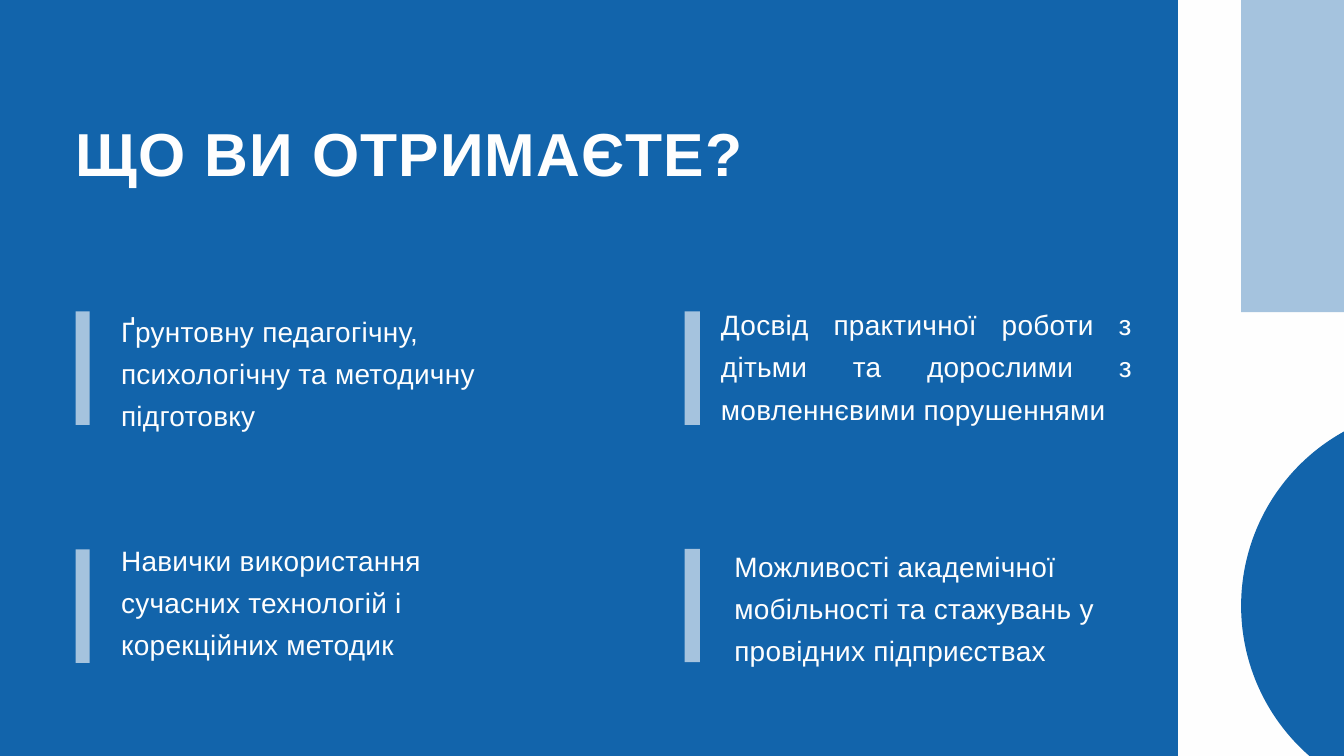
from pptx import Presentation
from pptx import util as u
from pptx.dml.color import RGBColor
from pptx.enum import shapes, text

PX = 9525  # EMU per pixel, 1920 x 1080 slide
COLORS = {"blue": "1264AB", "light": "A5C3DE", "white": "FEFEFE"}

prs = Presentation()
prs.slide_width, prs.slide_height = 1920 * PX, 1080 * PX
slide = prs.slides.add_slide(prs.slide_layouts[6])
slide.background.fill.solid()
slide.background.fill.fore_color.rgb = RGBColor.from_string(COLORS["blue"])


def add_block(kind, box, color):
    block = slide.shapes.add_shape(kind, *(v * PX for v in box))
    block.shadow.inherit = False
    block.fill.solid()
    block.fill.fore_color.rgb = RGBColor.from_string(COLORS[color])
    block.line.fill.background()


def add_words(words, box, size, leading, spacing, align=text.PP_ALIGN.LEFT, bold=False):
    """Add a one-paragraph text box; spacing is in hundredths of a point."""
    frame = slide.shapes.add_textbox(*(v * PX for v in box)).text_frame
    frame.word_wrap = True
    frame.margin_left = frame.margin_top = frame.margin_right = frame.margin_bottom = 0
    paragraph = frame.paragraphs[0]
    paragraph.alignment = align
    paragraph.line_spacing = u.Pt(leading)
    run = paragraph.add_run()
    run.text = words
    run.font.name = "Arial"
    run.font.size = u.Pt(size)
    run.font.bold = bold
    run.font.color.rgb = RGBColor.from_string(COLORS["white"])
    run.font._element.set("spc", str(spacing))


add_words("ЩО ВИ ОТРИМАЄТЕ?", (108, 170, 1408, 103), 65, 74.1, 120, bold=True)

# Benefit text, its left and top, then the left, top and width of its bar
LEFT, JUSTIFY = text.PP_ALIGN.LEFT, text.PP_ALIGN.JUSTIFY
benefits = [
    ("Можливості академічної мобільності та стажувань у провідних підприєствах",
     1049, 773, 978, 784, 22, LEFT),
    ("Досвід практичної роботи з дітьми та дорослими з мовленнєвими порушеннями",
     1030, 428, 978, 445, 22, JUSTIFY),
    ("Навички використання сучасних технологій і корекційних методик",
     173, 764, 108, 785, 20, LEFT),
    ("Ґрунтовну педагогічну, психологічну та методичну підготовку",
     173, 437, 108, 445, 20, LEFT),
]
for benefit, left, top, bar_left, bar_top, bar_width, align in benefits:
    add_words(benefit, (left, top, 588, 175), 30, 45, 30, align)
    add_block(shapes.MSO_SHAPE.RECTANGLE, (bar_left, bar_top, bar_width, 162), "light")

# Decorative strip on the right
add_block(shapes.MSO_SHAPE.RECTANGLE, (1683, -12, 237, 1105), "white")
add_block(shapes.MSO_SHAPE.OVAL, (1773, 581, 569, 569), "blue")
add_block(shapes.MSO_SHAPE.RECTANGLE, (1773, -27, 185, 473), "light")

prs.save("out.pptx")
